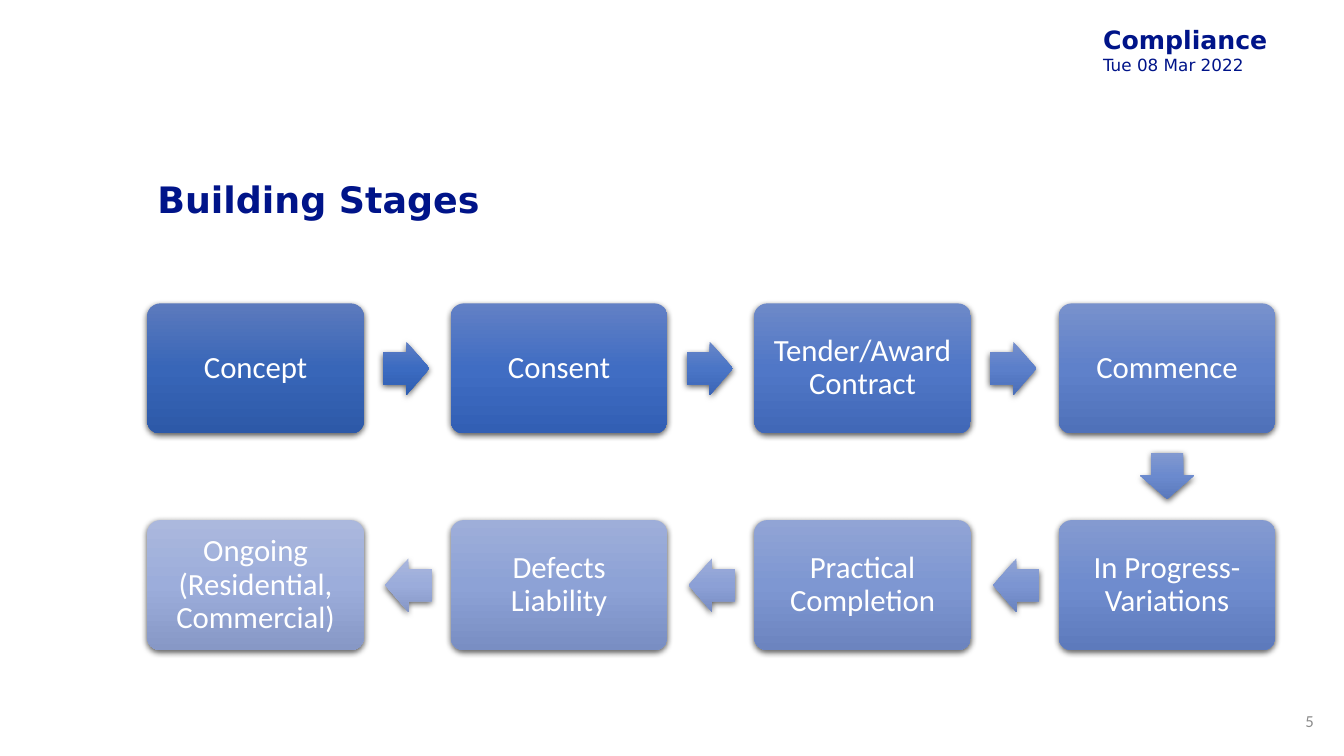
from dataclasses import dataclass

from lxml import etree
from pptx import Presentation
from pptx import util as u
from pptx.dml.color import RGBColor
from pptx.enum import shapes, text
from pptx.oxml import parse_xml

PX = 9144  # 100 px to the inch
NS = "http://schemas.openxmlformats.org/drawingml/2006/main"
NAVY, WHITE, GREY = "001489", "FFFFFF", "8C8C8C"
HEADING_FONT, BODY_FONT = "DejaVu Sans", "Calibri"

# Grid of stages: four across, then back along the second row
COLUMNS, LEFT, TOP = 4, 146, 301
STAGE_W, STAGE_H = 215, 129
LAST_COLUMN_OFFSET, ROW_STEP = 904, 215
ARROW_W, ARROW_H, ARROW_GAP = 46, 53, 19


@dataclass
class Stage:
    label: str
    gradient: tuple[str, str, str]
    arrow_gradient: tuple[str, str, str] | None = None  # arrow to the next stage


STAGES = [
    Stage("Concept", ("5C7ABD", "3866B8", "2D59A8"), ("5E7EC4", "3B6BC1", "2F5EB1")),
    Stage("Consent", ("6280C5", "406DC3", "325FB4"), ("6987C8", "4A75C6", "3C66B7")),
    Stage("Tender/Award Contract", ("6D89C8", "5077C7", "4168B7"), ("758FCC", "5B7FCA", "4B6FB9")),
    Stage("Commence", ("7891CC", "5F81CA", "4F71B9"), ("8299D0", "6B8ACE", "5A79BC")),
    Stage("In Progress- Variations", ("849AD0", "6F8CCE", "5D7ABC"), ("8FA3D4", "7C95D2", "6983BF")),
    Stage("Practical Completion", ("91A4D5", "7E97D2", "6C84BF"), ("9DADD9", "8CA0D6", "788DC3")),
    Stage("Defects Liability", ("9EAED9", "8DA2D6", "798EC3"), ("AAB7DD", "9BACDB", "8697C6")),
    Stage("Ongoing (Residential, Commercial)", ("ABB8DD", "9CADDB", "8798C6")),
]


def px(*lengths: float) -> list[int]:
    return [round(length * PX) for length in lengths]


def style(paragraph, font: str, size: int, color: str, bold: bool = False) -> None:
    paragraph.font.name = font
    paragraph.font.size = u.Pt(size)
    paragraph.font.bold = bold
    paragraph.font.color.rgb = RGBColor.from_string(color)


def set_margins(frame, side: int, end: int) -> None:
    frame.margin_left, frame.margin_right = px(side, side)
    frame.margin_top, frame.margin_bottom = px(end, end)


def add_glossy(slide, kind, box: tuple, gradient: tuple[str, str, str], *adjustments: float):
    """Add a shape with a top-to-bottom gradient and a soft shadow."""
    shape = slide.shapes.add_shape(kind, *px(*box))
    for index, value in enumerate(adjustments):
        shape.adjustments[index] = value
    shape.line.fill.background()
    stops = "".join(
        f'<a:gs pos="{index * 50000}"><a:srgbClr val="{color}"/></a:gs>'
        for index, color in enumerate(gradient)
    )
    properties = shape.element.spPr
    properties.find(f"{{{NS}}}prstGeom").addnext(parse_xml(
        f'<a:gradFill xmlns:a="{NS}" rotWithShape="0"><a:gsLst>{stops}</a:gsLst>'
        '<a:lin ang="5400000" scaled="0"/></a:gradFill>'
    ))
    shape.shadow.inherit = False
    shadow = etree.SubElement(
        properties.find(f"{{{NS}}}effectLst"), f"{{{NS}}}outerShdw",
        blurRad=str(u.Pt(4.5)), dist=str(u.Pt(1.5)), dir="5400000", rotWithShape="0",
    )
    black = etree.SubElement(shadow, f"{{{NS}}}srgbClr", val="000000")
    etree.SubElement(black, f"{{{NS}}}alpha", val="63000")
    return shape


def stage_cell(index: int) -> tuple[int, int]:
    """Return column and row of a stage on the snaking route."""
    row, step = divmod(index, COLUMNS)
    return (COLUMNS - 1 - step if row else step), row


def stage_corner(index: int) -> tuple[int, int]:
    column, row = stage_cell(index)
    return LEFT + LAST_COLUMN_OFFSET * column // (COLUMNS - 1), TOP + ROW_STEP * row


def add_stage(slide, index: int, stage: Stage) -> None:
    box = (*stage_corner(index), STAGE_W, STAGE_H)
    card = add_glossy(slide, shapes.MSO_SHAPE.ROUNDED_RECTANGLE, box, stage.gradient, 0.1)
    frame = card.text_frame
    frame.word_wrap = True
    frame.vertical_anchor = text.MSO_ANCHOR.MIDDLE
    set_margins(frame, 13, 13)
    label = frame.paragraphs[0]
    label.text = stage.label
    label.alignment = text.PP_ALIGN.CENTER
    label.line_spacing = 0.9
    style(label, BODY_FONT, 22, WHITE)


def add_arrow(slide, index: int, gradient: tuple[str, str, str]) -> None:
    """Add the arrow that leaves a stage towards the next one."""
    x, y = stage_corner(index)
    column, row = stage_cell(index)
    next_column, next_row = stage_cell(index + 1)
    reach = ARROW_GAP + ARROW_W / 2
    center_x, center_y = x + STAGE_W / 2, y + STAGE_H / 2
    if next_row > row:
        center_y, rotation = y + STAGE_H + reach, 90
    elif next_column > column:
        center_x, rotation = x + STAGE_W + reach, 0
    else:
        center_x, rotation = x - reach, 180
    box = (center_x - ARROW_W / 2, center_y - ARROW_H / 2, ARROW_W, ARROW_H)
    arrow = add_glossy(slide, shapes.MSO_SHAPE.RIGHT_ARROW, box, gradient, 0.6, 0.5)
    arrow.rotation = rotation


def main() -> None:
    deck = Presentation()
    deck.slide_width, deck.slide_height = px(1333, 750)
    slide = deck.slides.add_slide(deck.slide_layouts[5])

    # Topic and date
    header = slide.shapes.add_textbox(*px(1087, 20, 179, 88)).text_frame
    header.word_wrap = False
    set_margins(header, 7, 4)
    topic, date = header.paragraphs[0], header.add_paragraph()
    topic.text, date.text = "Compliance", "Tue 08 Mar 2022"
    style(topic, HEADING_FONT, 18, NAVY, bold=True)
    style(date, HEADING_FONT, 12, NAVY)

    # Title
    title = slide.shapes.title
    title.left, title.top, title.width, title.height = px(146, 150, 1120, 101)
    title.text_frame.vertical_anchor = text.MSO_ANCHOR.MIDDLE
    heading = title.text_frame.paragraphs[0]
    heading.text = "Building Stages"
    heading.alignment = text.PP_ALIGN.LEFT
    heading.line_spacing = 0.9
    style(heading, HEADING_FONT, 26, NAVY, bold=True)

    # Stages and the arrows between them
    for index, stage in enumerate(STAGES):
        add_stage(slide, index, stage)
        if stage.arrow_gradient:
            add_arrow(slide, index, stage.arrow_gradient)

    # Slide number
    footer = slide.shapes.add_textbox(*px(1271, 695, 42, 40)).text_frame
    footer.word_wrap = True
    footer.vertical_anchor = text.MSO_ANCHOR.MIDDLE
    number = footer.paragraphs[0]
    number.text = "5"
    number.alignment = text.PP_ALIGN.RIGHT
    style(number, BODY_FONT, 12, GREY)

    deck.save("out.pptx")


if __name__ == "__main__":
    main()
